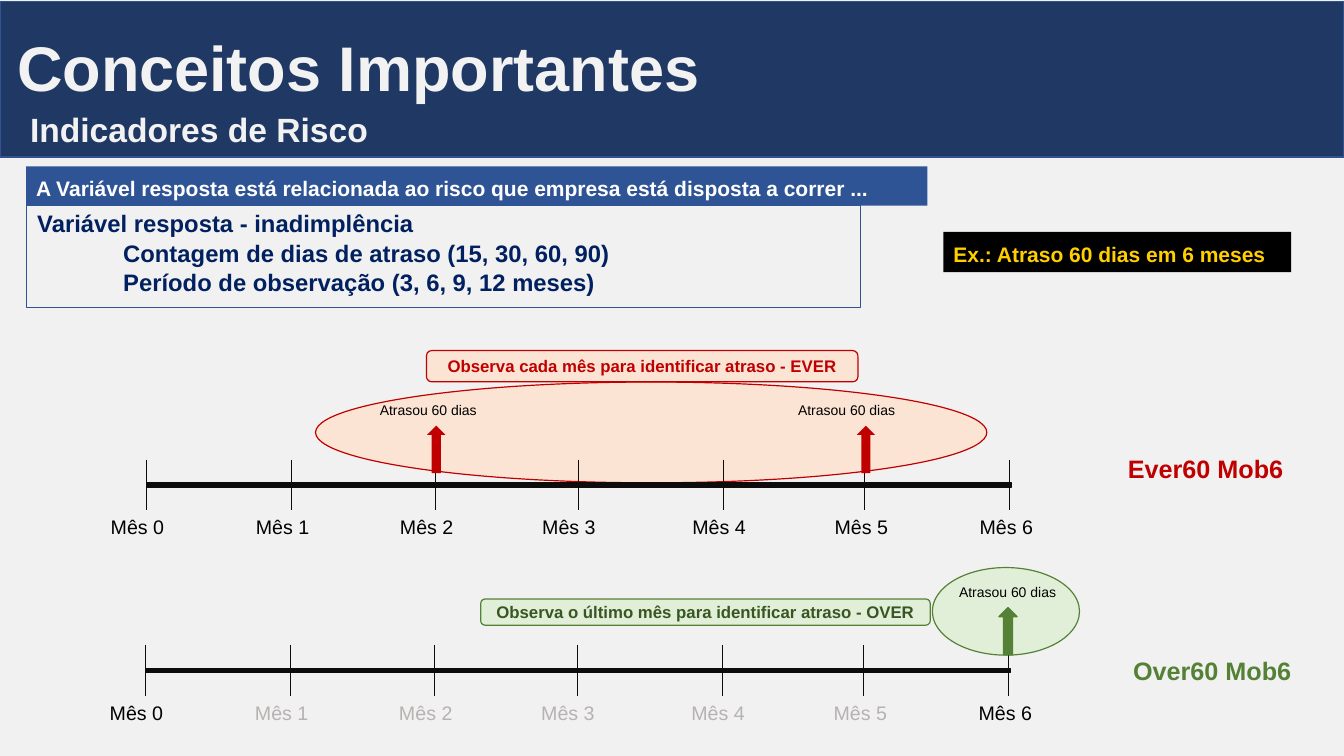
import lxml.etree
import pptx
import pptx.dml.color
import pptx.enum.shapes
import pptx.enum.text
import pptx.oxml.ns
import pptx.util

Pt = pptx.util.Pt
RGBColor = pptx.dml.color.RGBColor
SHAPE = pptx.enum.shapes.MSO_SHAPE
ALIGN = pptx.enum.text.PP_ALIGN
ANCHOR = pptx.enum.text.MSO_ANCHOR

PAPER = RGBColor(0xF2, 0xF1, 0xF1)
BLACK = RGBColor(0, 0, 0)
INK = RGBColor(0x0C, 0x0C, 0x0C)
FADED = RGBColor(0xB7, 0xB2, 0xB2)
WHITE = RGBColor(0xFF, 0xFF, 0xFF)
OFF_WHITE = RGBColor(0xF2, 0xF2, 0xF2)
NAVY = RGBColor(0x1F, 0x38, 0x64)
NAVY_EDGE = RGBColor(0x31, 0x53, 0x8F)
BLUE = RGBColor(0x2F, 0x54, 0x96)
DEEP_BLUE = RGBColor(0x00, 0x20, 0x60)
YELLOW = RGBColor(0xFF, 0xCF, 0x00)
RED = RGBColor(0xC0, 0x00, 0x00)
PEACH = RGBColor(0xFB, 0xE4, 0xD4)
GREEN = RGBColor(0x54, 0x81, 0x35)
DARK_GREEN = RGBColor(0x38, 0x56, 0x23)
MINT = RGBColor(0xE1, 0xEF, 0xD8)

TICK_X = [104.4, 208.1, 311, 413.3, 517, 617.8, 721.4]
MONTH_X = [72, 175.7, 278.6, 380.2, 487.4, 589, 692.6]


class RiskSlide:
    font = "Arial"
    outline = 0.85

    def __init__(self, deck):
        self.slide = deck.slides.add_slide(deck.slide_layouts[1])
        self.slide.background.fill.solid()
        self.slide.background.fill.fore_color.rgb = PAPER

    def set_words(self, frame, words, size, color, bold=False, align=ALIGN.LEFT, anchor=ANCHOR.TOP):
        frame.text = words
        frame.word_wrap = True
        frame.auto_size = pptx.enum.text.MSO_AUTO_SIZE.NONE
        frame.vertical_anchor = anchor
        for paragraph in frame.paragraphs:
            paragraph.alignment = align
            for run in paragraph.runs:
                run.font.name = self.font
                run.font.size = Pt(size)
                run.font.bold = bold
                run.font.color.rgb = color

    def shape(self, kind, box, fill=None, line=None, adjust=None):
        figure = self.slide.shapes.add_shape(kind, *map(Pt, box))
        figure.shadow.inherit = False
        if fill is None:
            figure.fill.background()
        else:
            figure.fill.solid()
            figure.fill.fore_color.rgb = fill
        if line is None:
            figure.line.fill.background()
        else:
            figure.line.color.rgb = line
            figure.line.width = Pt(self.outline)
        if adjust is not None:
            figure.adjustments[0] = adjust
        return figure

    def label(self, box, words, size, color, **style):
        self.set_words(self.slide.shapes.add_textbox(*map(Pt, box)).text_frame, words, size, color, **style)

    def strip(self, box, words, fill, color):
        self.set_words(self.shape(SHAPE.RECTANGLE, box, fill).text_frame, words, 15, color,
                       bold=True, anchor=ANCHOR.BOTTOM)

    def badge(self, box, words, fill, line, color):
        pill = self.shape(SHAPE.ROUNDED_RECTANGLE, box, fill, line, 0.167)
        self.set_words(pill.text_frame, words, 12, color, bold=True,
                       align=ALIGN.CENTER, anchor=ANCHOR.MIDDLE)

    def tick(self, x, top, height):
        mark = self.slide.shapes.add_connector(
            pptx.enum.shapes.MSO_CONNECTOR.STRAIGHT, Pt(x), Pt(top), Pt(x), Pt(top + height))
        mark.line.color.rgb = INK
        mark.line.width = Pt(0.75)
        lxml.etree.SubElement(mark.element.spPr, pptx.oxml.ns.qn("a:effectLst"))

    def timeline(self, shift, top, active_months):
        self.shape(SHAPE.MATH_MINUS, (shift - 6.5, top + 11.5, 840.2, 13), INK, INK, 0.235)
        for x in TICK_X:
            self.tick(x + shift, top, 36)
        for month, x in enumerate(MONTH_X):
            self.label((x + shift, top + 36, 66.2, 24.5), f"Mês {month}", 14,
                       BLACK if month in active_months else FADED)

    def delay(self, arrow_x, arrow_top, label_x, fill, line=None, align=ALIGN.LEFT):
        self.shape(SHAPE.UP_ARROW, (arrow_x, arrow_top, 13, 33.8), fill, line)
        self.label((label_x, arrow_top - 20.9, 94.3, 19.4), "Atrasou 60 dias", 10, BLACK, align=align)

    def place(self, placeholder, box):
        placeholder.left, placeholder.top, placeholder.width, placeholder.height = map(Pt, box)
        placeholder.element.getparent().append(placeholder.element)

    def title(self, box, words):
        heading = self.slide.shapes.title
        self.place(heading, box)
        self.set_words(heading.text_frame, words, 45, OFF_WHITE, bold=True, anchor=ANCHOR.BOTTOM)

    def body(self, box, lines, indent):
        definition = self.slide.placeholders[1]
        self.place(definition, box)
        self.set_words(definition.text_frame, "\n".join(lines), 17, DEEP_BLUE, bold=True)
        for row, paragraph in enumerate(definition.text_frame.paragraphs):
            paragraph.space_before = Pt(0.85)
            properties = paragraph._p.get_or_add_pPr()
            properties.set("marL", str(Pt(indent if row else 0)))
            properties.set("indent", "0")
            lxml.etree.SubElement(properties, pptx.oxml.ns.qn("a:buNone"))


def main():
    deck = pptx.Presentation()
    deck.slide_width, deck.slide_height = Pt(960), Pt(540)
    risk = RiskSlide(deck)

    risk.shape(SHAPE.OVAL, (666, 405.4, 105.1, 62.6), MINT, GREEN)
    risk.shape(SHAPE.OVAL, (225.4, 272.9, 479.5, 72), PEACH, RED)
    risk.timeline(0, 328.3, range(7))
    risk.timeline(-0.7, 460.8, (0, 6))

    for arrow_x, label_x in ((305.1, 264.2), (612, 563)):
        risk.delay(arrow_x, 304.1, label_x, RED)
    risk.delay(713.5, 434, 672.5, GREEN, GREEN, ALIGN.CENTER)
    risk.label((794.2, 320.4, 133.9, 28.8), "Ever60 Mob6", 18, RED, bold=True, align=ALIGN.CENTER)
    risk.label((794.2, 464.4, 143.3, 28.8), "Over60 Mob6", 18, GREEN, bold=True, align=ALIGN.CENTER)
    risk.badge((304.6, 250.4, 308.2, 22.3), "Observa cada mês para identificar atraso - EVER",
               PEACH, RED, RED)
    risk.badge((343.4, 427.9, 321.1, 18.7), "Observa o último mês para identificar atraso - OVER",
               MINT, GREEN, DARK_GREEN)

    risk.shape(SHAPE.RECTANGLE, (0, 1.2, 960, 111), NAVY, NAVY_EDGE)
    risk.title((5, 18.7, 681.1, 59), "Conceitos Importantes")
    risk.label((14.4, 69.8, 378, 40.3), "Indicadores de Risco", 24, OFF_WHITE,
               bold=True, anchor=ANCHOR.BOTTOM)

    risk.body((19.4, 145.4, 596.2, 69.1), (
        "Variável resposta - inadimplência",
        "Contagem de dias de atraso (15, 30, 60, 90)",
        "Período de observação (3, 6, 9, 12 meses)",
    ), 61.4)
    risk.shape(SHAPE.RECTANGLE, (18.7, 146.9, 596.2, 72.7), line=BLUE)
    risk.strip((18.7, 118.8, 643.7, 28.1),
               "A Variável resposta está relacionada ao risco que empresa está disposta a correr ...",
               BLUE, WHITE)
    risk.strip((673.9, 165.6, 248.4, 28.8), "Ex.: Atraso 60 dias em 6 meses", BLACK, YELLOW)
    deck.save("out.pptx")


if __name__ == "__main__":
    main()
